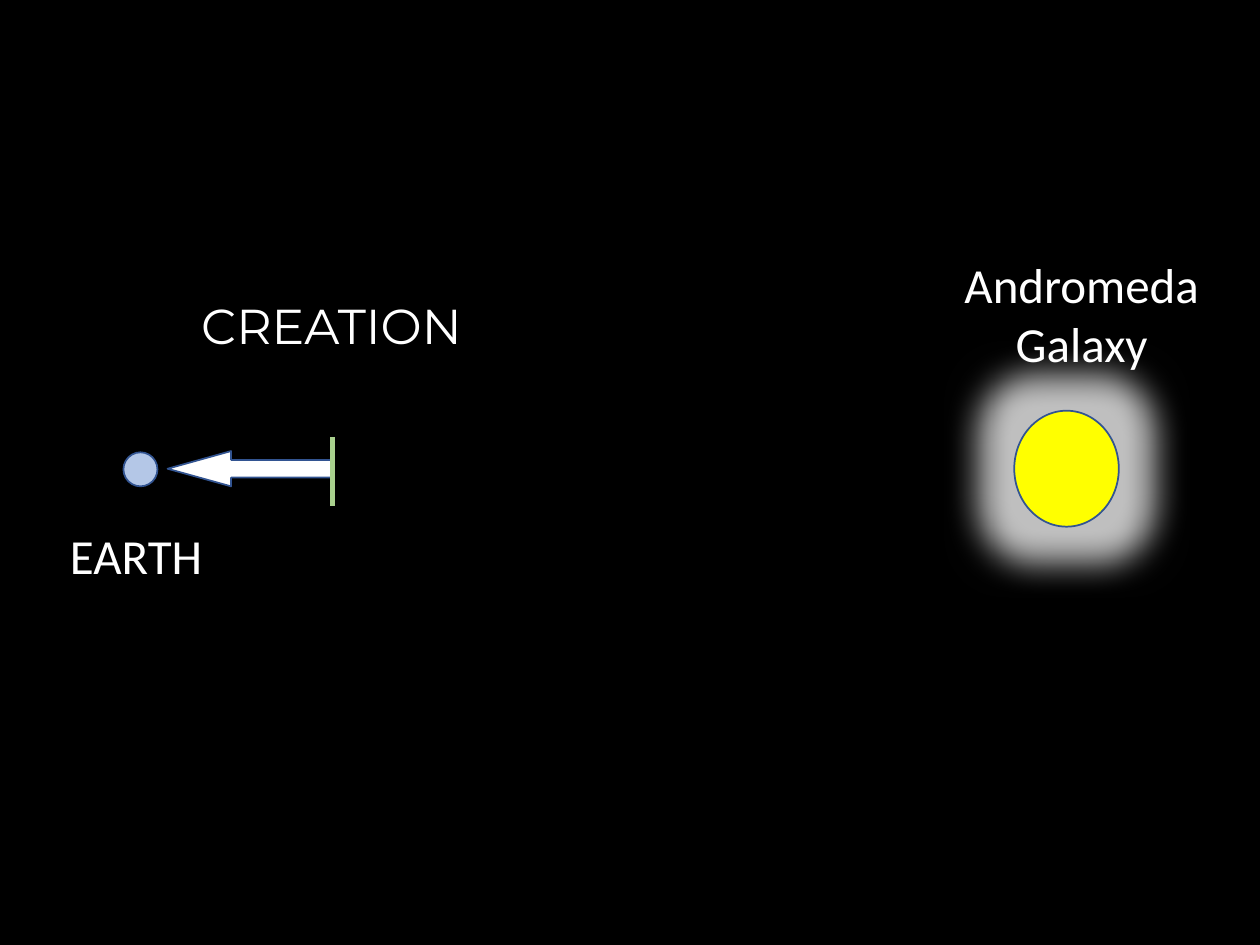
from lxml import etree
from pptx import Presentation, util as u
from pptx.dml.color import RGBColor
from pptx.enum import shapes, text
from pptx.oxml import ns

BLACK = RGBColor(0x00, 0x00, 0x00)
WHITE = RGBColor(0xFF, 0xFF, 0xFF)
NAVY = RGBColor(0x32, 0x54, 0x91)
BLUE = RGBColor(0xB4, 0xC7, 0xE7)
YELLOW = RGBColor(0xFF, 0xFF, 0x00)
GREEN = RGBColor(0xA9, 0xD1, 0x8E)
COLS, ROWS = 100, 75
CELL = u.Inches(10) // COLS


def cells(*nums):
    return [round(n * CELL) for n in nums]


def add_form(page, kind, area, fill):
    form = page.shapes.add_shape(kind, *cells(*area))
    form.shadow.inherit = False
    form.fill.solid()
    form.fill.fore_color.rgb = fill
    form.line.color.rgb = NAVY
    form.line.width = u.Pt(1)
    return form


def add_label(page, area, lines, font="Calibri"):
    frame = page.shapes.add_textbox(*cells(*area)).text_frame
    frame.word_wrap = True
    frame.auto_size = text.MSO_AUTO_SIZE.SHAPE_TO_FIT_TEXT
    for i, line in enumerate(lines):
        para = frame.add_paragraph() if i else frame.paragraphs[0]
        para.alignment = text.PP_ALIGN.CENTER
        run = para.add_run()
        run.text = line
        run.font.name = font
        run.font.size = u.Pt(28)
        run.font.color.rgb = WHITE


def add_glow(form, size, tint, alpha):
    fx = form.element.spPr.find(ns.qn("a:effectLst"))
    glow = etree.SubElement(fx, ns.qn("a:glow"), rad=str(size))
    hue = etree.SubElement(glow, ns.qn("a:srgbClr"), val=str(tint))
    etree.SubElement(hue, ns.qn("a:alpha"), val=str(alpha * 1000))


def draw_earth(page, x, y, w, h):
    size = 2.7
    add_form(page, shapes.MSO_SHAPE.OVAL, (x + 6.5, y, size, size), BLUE)
    add_label(page, (x, y + h - 5.7, w, 5.7), ["EARTH"])


def draw_galaxy(page, x, y, w, h):
    star = add_form(page, shapes.MSO_SHAPE.OVAL,
                    (x + 8, y + h - 9.2, 8.3, 9.2), YELLOW)
    add_glow(star, u.Pt(40), WHITE, 75)
    add_label(page, (x, y, w, 10.4), ["Andromeda", "Galaxy"])


def draw_start(page, x, y, w, h):
    mid = x + w / 2 + 0.1
    arrow = add_form(page, shapes.MSO_SHAPE.RIGHT_ARROW,
                     (mid - 13.1, y + h - 4.4, 13, 2.8), WHITE)
    arrow.rotation = 180
    arrow.adjustments[0] = 0.5
    arrow.adjustments[1] = 1.8
    bar = page.shapes.add_connector(
        shapes.MSO_CONNECTOR.STRAIGHT, *cells(mid, y + h - 5.5, mid, y + h))
    bar.line.color.rgb = GREEN
    bar.line.width = u.Pt(3)
    etree.SubElement(bar.element.spPr, ns.qn("a:effectLst"))
    add_label(page, (x, y, w, 5.7), ["CREATION"], "Montserrat")


def main():
    deck = Presentation()
    deck.slide_width, deck.slide_height = COLS * CELL, ROWS * CELL
    page = deck.slides.add_slide(deck.slide_layouts[6])
    page.background.fill.solid()
    page.background.fill.fore_color.rgb = BLACK
    draw_earth(page, 3.3, 35.9, 15, 11)
    draw_galaxy(page, 72.5, 19.7, 26.7, 22.1)
    draw_start(page, 12.6, 23, 27.4, 17.2)
    deck.save("out.pptx")


if __name__ == "__main__":
    main()
